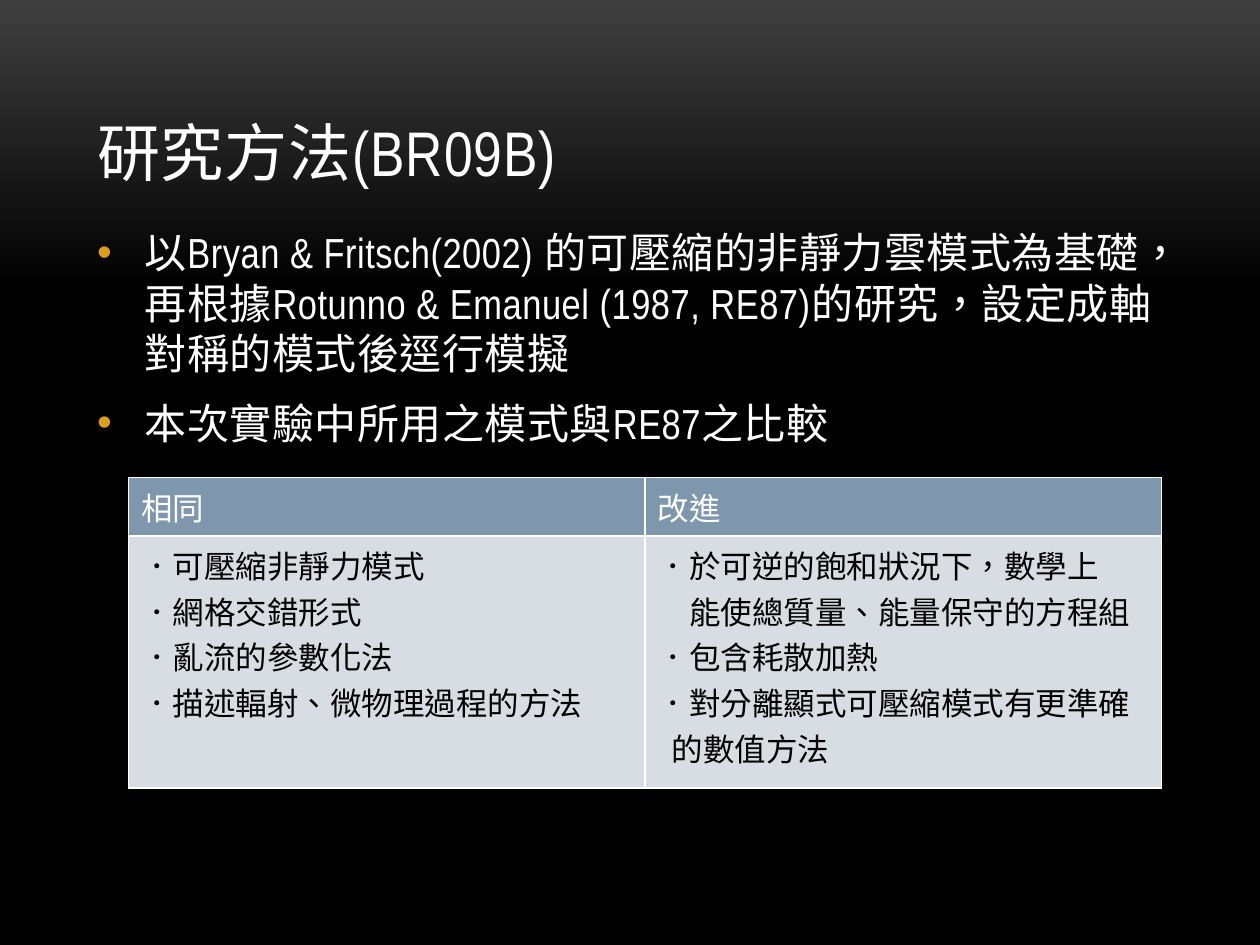
from lxml.etree import SubElement
from pptx import Presentation
from pptx.dml.color import RGBColor
from pptx.enum.lang import MSO_LANGUAGE_ID
from pptx.enum.text import MSO_ANCHOR, MSO_AUTO_SIZE, PP_ALIGN
from pptx.oxml.ns import qn
from pptx.util import Inches, Pt

COLORS = {
    "glow": "3F3F3F", "black": "000000", "white": "FFFFFF",
    "bullet": "DC9E1F", "header": "7E97AD", "cell": "D8DDE3",
}
FONT = "Arial Narrow"


def add_text(paragraph, text, size, color, spacing=0):
    run = paragraph.add_run()
    run.text = text
    run.font.name = FONT
    run.font.size = Pt(size)
    run.font.color.rgb = RGBColor.from_string(COLORS[color])
    run.font.language_id = MSO_LANGUAGE_ID.TRADITIONAL_CHINESE
    if spacing:
        run.font._element.set("spc", str(spacing))


def set_borders(cell, color, width):
    properties = cell._tc.get_or_add_tcPr()
    for side in ("a:lnL", "a:lnR", "a:lnT", "a:lnB"):
        line = SubElement(properties, qn(side), w=str(Pt(width)))
        fill = SubElement(line, qn("a:solidFill"))
        SubElement(fill, qn("a:srgbClr"), val=COLORS[color])


prs = Presentation()
prs.slide_width, prs.slide_height = Inches(10), Inches(7.5)
slide = prs.slides.add_slide(prs.slide_layouts[1])

# Background: grey fading down to black
background = slide.background.fill
background.gradient()
background.gradient_angle = 270
for stop, (position, color) in zip(background.gradient_stops,
                                   [(0, "glow"), (0.31, "black")]):
    stop.position = position
    stop.color.rgb = RGBColor.from_string(COLORS[color])

# Title and body placeholders
title, body = slide.shapes.title, slide.placeholders[1]
for placeholder, top, height, anchor in [
    (title, 0.3, 1.25, MSO_ANCHOR.BOTTOM),
    (body, 1.75, 4.68, MSO_ANCHOR.TOP),
]:
    placeholder.left, placeholder.top = Inches(0.67), Inches(top)
    placeholder.width, placeholder.height = Inches(8.67), Inches(height)
    placeholder.text_frame.vertical_anchor = anchor
    placeholder.text_frame.auto_size = MSO_AUTO_SIZE.NONE

heading = title.text_frame.paragraphs[0]
heading.alignment = PP_ALIGN.LEFT
add_text(heading, "研究方法(BR09B)", 36, "white", spacing=50)

# Method bullets
methods = [
    "以Bryan & Fritsch(2002) 的可壓縮的非靜力雲模式為基礎，"
    "再根據Rotunno & Emanuel (1987, RE87)的研究，設定成軸對稱的模式後逕行模擬",
    "本次實驗中所用之模式與RE87之比較",
]
for i, method in enumerate(methods):
    paragraph = body.text_frame.add_paragraph() if i else body.text_frame.paragraphs[0]
    properties = paragraph._p.get_or_add_pPr()
    properties.set("marL", str(Inches(0.38)))
    properties.set("indent", str(Inches(-0.38)))
    bullet_color = SubElement(properties, qn("a:buClr"))
    SubElement(bullet_color, qn("a:srgbClr"), val=COLORS["bullet"])
    SubElement(properties, qn("a:buFont"), typeface="Arial")
    SubElement(properties, qn("a:buChar"), char="•")
    paragraph.space_before = Pt(5 if i else 0)
    paragraph.space_after = Pt(6)
    add_text(paragraph, method, 24, "white", spacing=30)

# Comparison table: each line is (text, left indent in inches)
same = [
    ("．可壓縮非靜力模式", 0),
    ("．網格交錯形式", 0),
    ("．亂流的參數化法", 0),
    ("．描述輻射、微物理過程的方法", 0),
]
improved = [
    ("．於可逆的飽和狀況下，數學上", 0),
    ("能使總質量、能量保守的方程組", 0.25),
    ("．包含耗散加熱", 0),
    ("．對分離顯式可壓縮模式有更準確", 0),
    ("的數值方法", 0.11),
]
rows = [
    (0.36, "header", "white", [[("相同", 0)], [("改進", 0)]]),
    (2, "cell", "black", [same, improved]),
]
comparison = slide.shapes.add_table(
    2, 2, Inches(1.02), Inches(3.79), Inches(8.2), Inches(2.36)).table
for r, (height, fill, ink, contents) in enumerate(rows):
    comparison.rows[r].height = Inches(height)
    for c, lines in enumerate(contents):
        cell = comparison.cell(r, c)
        set_borders(cell, "white", 1)
        cell.fill.solid()
        cell.fill.fore_color.rgb = RGBColor.from_string(COLORS[fill])
        for i, (text, indent) in enumerate(lines):
            paragraph = cell.text_frame.add_paragraph() if i else cell.text_frame.paragraphs[0]
            if indent:
                paragraph._p.get_or_add_pPr().set("marL", str(Inches(indent)))
            add_text(paragraph, text, 18, ink)
            paragraph.runs[0].font.bold = False

prs.save("out.pptx")
